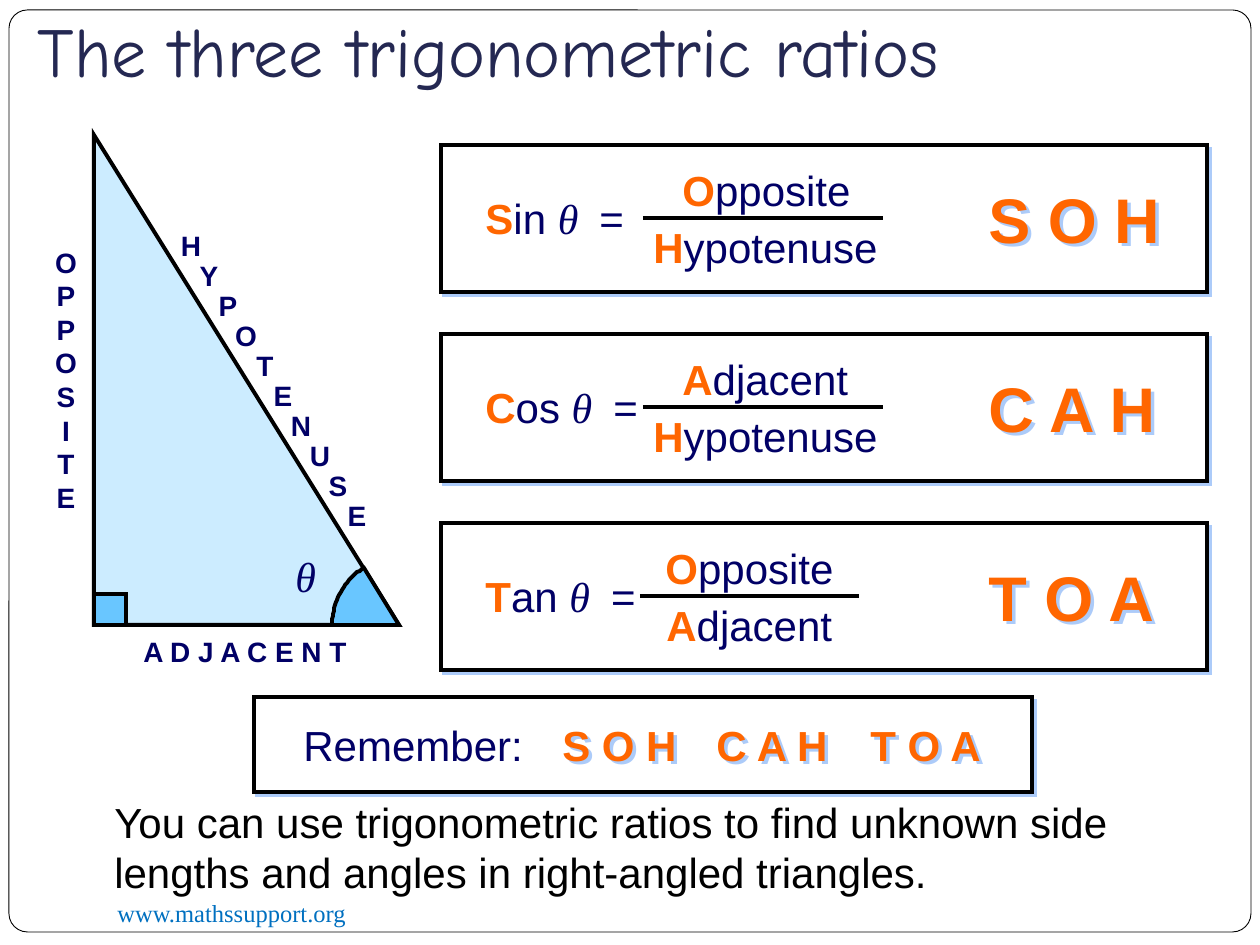
import math
from dataclasses import dataclass

import pptx
import pptx.dml.color
import pptx.enum.shapes
import pptx.enum.text
import pptx.oxml
import pptx.oxml.ns
import pptx.util

PX = 914400 / 126
LINE_HEIGHT = 1.2
COLORS = {
    "paper": "FFFFFF", "ink": "000000", "title": "242852", "navy": "010066",
    "orange": "FF6600", "shadow": "ACCBF9", "link": "0070C0",
    "triangle": "CCECFF", "angle": "69C6FF",
}
SHAPE = pptx.enum.shapes.MSO_SHAPE
ALIGN = pptx.enum.text.PP_ALIGN


@dataclass
class Span:
    text: str
    color: str = "navy"
    bold: bool = False
    italic: bool = False
    font: str = "Arial"


@dataclass
class Ratio:
    name: str
    name_width: int
    top: str
    top_left: int
    top_width: int
    bottom: str
    bottom_left: int
    bottom_width: int
    bar_left: int
    bar_right: int
    acronym: str


def px(length: float) -> int:
    return round(length * PX)


def rgb(name: str) -> pptx.dml.color.RGBColor:
    return pptx.dml.color.RGBColor.from_string(COLORS[name])


def add_shadow(shape) -> None:
    shape.shadow.inherit = False
    effects = shape.element.spPr.find(pptx.oxml.ns.qn("a:effectLst"))
    effects.append(pptx.oxml.parse_xml(
        f'<a:outerShdw {pptx.oxml.ns.nsdecls("a")} dist="35921" dir="2700000" '
        f'algn="ctr" rotWithShape="0"><a:srgbClr val="{COLORS["shadow"]}"/></a:outerShdw>'))


def paint(shape, fill: str, width: float = 2.25) -> None:
    shape.shadow.inherit = False
    shape.fill.solid()
    shape.fill.fore_color.rgb = rgb(fill)
    shape.line.color.rgb = rgb("ink")
    shape.line.width = pptx.util.Pt(width)
    # Sharp corners
    outline = shape.element.spPr.find(pptx.oxml.ns.qn("a:ln"))
    outline.append(pptx.oxml.parse_xml(
        f'<a:miter {pptx.oxml.ns.nsdecls("a")} lim="800000"/>'))


def add_block(parent, kind, left: int, top: int, width: int, height: int,
              fill: str, line: float = 2.25):
    block = parent.shapes.add_shape(kind, px(left), px(top), px(width), px(height))
    paint(block, fill, line)
    return block


def add_text(parent, left: int, top: int, width: int, height: int, size: int,
             lines: list[list[Span]], align=ALIGN.LEFT, wrap: bool = False):
    box = parent.shapes.add_textbox(px(left), px(top), px(width), px(height))
    frame = box.text_frame
    frame.word_wrap = wrap
    frame.auto_size = pptx.enum.text.MSO_AUTO_SIZE.SHAPE_TO_FIT_TEXT
    for number, spans in enumerate(lines):
        para = frame.add_paragraph() if number else frame.paragraphs[0]
        para.alignment = align
        para.line_spacing = pptx.util.Pt(size * LINE_HEIGHT)
        for span in spans:
            run = para.add_run()
            run.text = span.text
            run.font.size = pptx.util.Pt(size)
            run.font.name = span.font
            run.font.bold = span.bold
            run.font.italic = span.italic
            run.font.color.rgb = rgb(span.color)
    return box


def initial(word: str) -> list[Span]:
    """Highlight the first letter of a word."""
    return [Span(word[0], "orange", bold=True), Span(word[1:])]


def add_acronym(parent, text: str, left: int, top: int, width: int,
                height: int, size: int) -> None:
    add_shadow(add_text(parent, left, top, width, height, size,
                        [[Span(text, "orange", bold=True)]]))


def add_ratio(page, ratio: Ratio, top: int) -> None:
    card = page.shapes.add_group_shape()
    add_shadow(add_block(card, SHAPE.RECTANGLE, 441, top, 766, 147, "paper"))
    name = initial(ratio.name + " ") + [THETA_GAP, Span("=")]
    add_text(card, 473, top + 41, ratio.name_width, 63, 24, [name])
    add_text(card, ratio.top_left, top + 13, ratio.top_width, 63, 24, [initial(ratio.top)])
    bar = card.shapes.add_connector(
        pptx.enum.shapes.MSO_CONNECTOR.STRAIGHT,
        px(ratio.bar_left), px(top + 73), px(ratio.bar_right), px(top + 73))
    bar.line.color.rgb = rgb("ink")
    bar.line.width = pptx.util.Pt(2.25)
    bar.element.spPr.append(pptx.oxml.parse_xml(
        f'<a:effectLst {pptx.oxml.ns.nsdecls("a")}/>'))
    add_text(card, ratio.bottom_left, top + 70, ratio.bottom_width, 63, 24,
             [initial(ratio.bottom)])
    add_acronym(page, ratio.acronym, 976, top + 29, 208, 88, 36)


THETA_GAP = Span("θ  ", italic=True, font="Times New Roman")
RATIOS = [
    Ratio("Sin", 168, "Opposite", 670, 198, "Hypotenuse", 641, 254, 643, 883, "S O H"),
    Ratio("Cos", 182, "Adjacent", 670, 198, "Hypotenuse", 641, 254, 643, 883, "C A H"),
    Ratio("Tan", 180, "Opposite", 653, 198, "Adjacent", 654, 198, 640, 859, "T O A"),
]


def add_triangle(page) -> None:
    left, top, right, bottom = 94, 135, 399, 625
    add_block(page, SHAPE.RIGHT_TRIANGLE, left, top, right - left, bottom - top, "triangle")

    # Angle sector at the right-hand corner
    radius, sweep, steps = 67, 59, 24
    arc = [(right - radius * math.cos(math.radians(sweep * step / steps)),
            bottom - radius * math.sin(math.radians(sweep * step / steps)))
           for step in range(steps + 1)]
    builder = page.shapes.build_freeform(right, bottom, scale=PX)
    builder.add_line_segments(arc, close=True)
    paint(builder.convert_to_shape(), "angle")
    add_text(page, 283, 544, 45, 63, 24,
             [[Span("θ", italic=True, font="Times New Roman")]], ALIGN.CENTER)

    # Side names
    add_text(page, 42, 239, 48, 282, 16,
             [[Span(letter, bold=True)] for letter in "OPPOSITE"], ALIGN.CENTER)
    for step, letter in enumerate("HYPOTENUSE"):
        add_text(page, round(166 + 18.4 * step), 222 + 30 * step, 50, 47, 16,
                 [[Span(letter, bold=True)]], ALIGN.CENTER)
    add_block(page, SHAPE.RECTANGLE, left, bottom - 31, 32, 31, "angle")
    add_text(page, 131, 628, 240, 47, 16, [[Span("A D J A C E N T", bold=True)]])


def add_reminder(page) -> None:
    banner = page.shapes.add_group_shape()
    add_shadow(add_block(banner, SHAPE.RECTANGLE, 254, 697, 778, 95, "paper"))
    add_text(banner, 291, 713, 256, 63, 24, [[Span("Remember:")]])
    for number, ratio in enumerate(RATIOS):
        add_acronym(banner, ratio.acronym, 550 + 154 * number, 713, 150, 63, 24)


def main() -> None:
    deck = pptx.Presentation()
    deck.slide_width, deck.slide_height = px(1260), px(945)
    page = deck.slides.add_slide(deck.slide_layouts[5])

    # Title, with the page frame behind it
    title = page.shapes.title
    title.left, title.top, title.width, title.height = px(25), px(20), px(1071), px(84)
    frame = title.text_frame
    frame.text = "The three trigonometric ratios"
    frame.auto_size = pptx.enum.text.MSO_AUTO_SIZE.NONE
    frame.vertical_anchor = pptx.enum.text.MSO_ANCHOR.BOTTOM
    frame.margin_bottom = pptx.util.Inches(0.1)
    para = frame.paragraphs[0]
    para.alignment = ALIGN.LEFT
    font = para.runs[0].font
    font.name, font.size = "Comic Neue", pptx.util.Pt(40)
    font.color.rgb = rgb("title")
    border = add_block(page, SHAPE.ROUNDED_RECTANGLE, 9, 10, 1242, 922, "paper", 0.5)
    border.adjustments[0] = 0.02
    title.element.addprevious(border.element)

    # Web address
    add_text(page, 105, 892, 410, 43, 14,
             [[Span("www.mathssupport.org", "link", font="Times New Roman")]], wrap=True)

    # Ratio cards, reminder and triangle
    for number, ratio in enumerate(RATIOS):
        add_ratio(page, ratio, 145 + 189 * number)
    add_reminder(page)
    add_triangle(page)

    # Closing sentence
    add_text(page, 102, 790, 1071, 115, 24, [[Span(
        "You can use trigonometric ratios to find unknown side lengths "
        "and angles in right-angled triangles.", "ink")]], wrap=True)
    deck.save("out.pptx")


if __name__ == "__main__":
    main()
